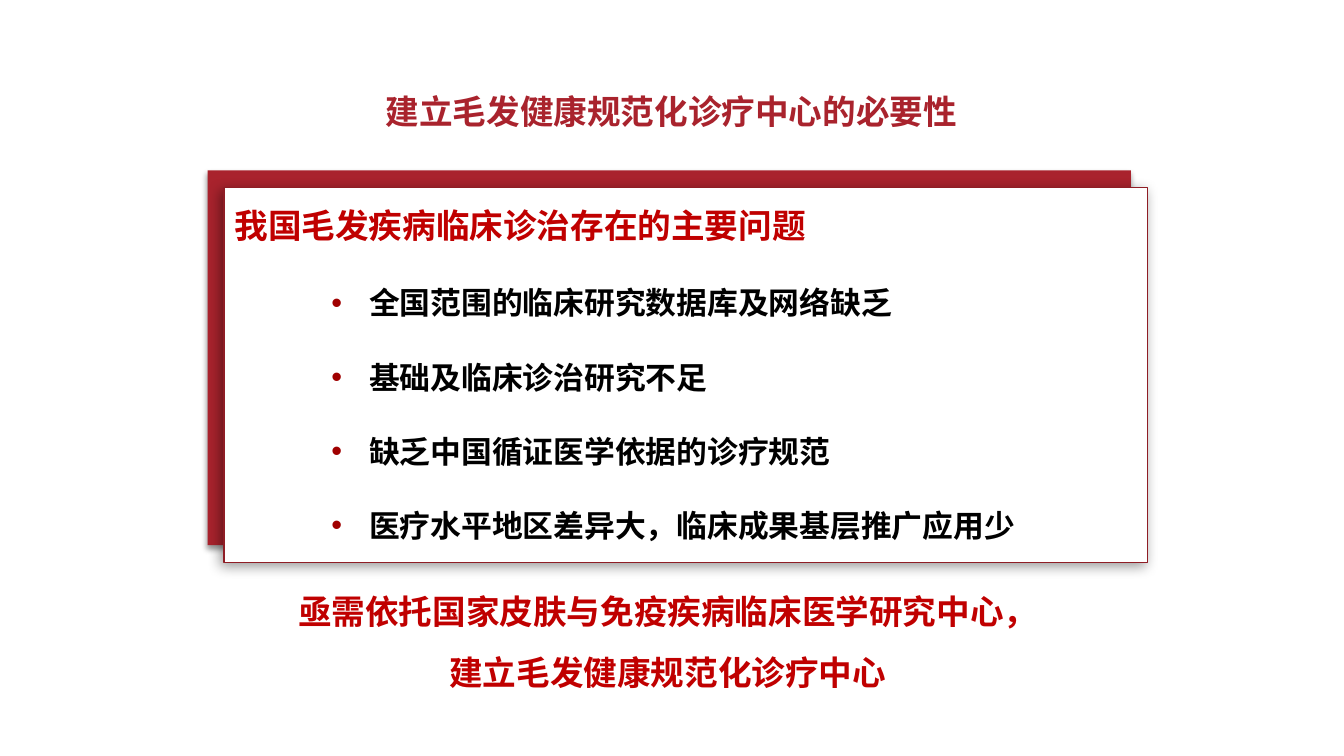
from dataclasses import dataclass

from lxml import etree
from pptx import Presentation
from pptx.dml.color import RGBColor
from pptx.enum import shapes, text
from pptx.oxml import ns
from pptx.util import Pt


@dataclass(frozen=True)
class Theme:
    font: str = "Noto Sans CJK SC"
    crimson: str = "A9232D"
    border: str = "8F1D25"
    red: str = "C00000"
    bullet: str = "A00000"
    black: str = "000000"
    white: str = "FFFFFF"
    heading_size: int = 24
    body_size: int = 22


THEME = Theme()
PROBLEMS = [
    "全国范围的临床研究数据库及网络缺乏",
    "基础及临床诊治研究不足",
    "缺乏中国循证医学依据的诊疗规范",
    "医疗水平地区差异大，临床成果基层推广应用少",
]
CONCLUSION = [
    "亟需依托国家皮肤与免疫疾病临床医学研究中心，",
    "建立毛发健康规范化诊疗中心",
]


def add_xml(parent, tag, **attrs):
    return etree.SubElement(parent, ns.qn(tag), attrs)


def add_shadow(sp, blur, distance, angle):
    sp.shadow.inherit = False
    effects = sp._element.spPr.find(ns.qn("a:effectLst"))
    outer = add_xml(effects, "a:outerShdw", blurRad=str(Pt(blur)), dist=str(Pt(distance)),
                    dir=str(angle * 60000), algn="ctr", rotWithShape="0")
    color = add_xml(outer, "a:srgbClr", val=THEME.black)
    add_xml(color, "a:alpha", val="40000")


def add_panel(s, left, top, fill, blur, angle, line=None):
    sp = s.shapes.add_shape(shapes.MSO_SHAPE.RECTANGLE,
                            Pt(left), Pt(top), Pt(659.5), Pt(267.8))
    sp.fill.solid()
    sp.fill.fore_color.rgb = RGBColor.from_string(fill)
    if line:
        sp.line.color.rgb = RGBColor.from_string(line)
        sp.line.width = Pt(1)
    else:
        sp.line.fill.background()
    add_shadow(sp, blur, 3, angle)


def add_bullet(p):
    pPr = p._p.get_or_add_pPr()
    pPr.set("marL", str(Pt(27)))
    pPr.set("indent", str(-Pt(27)))
    color = add_xml(pPr, "a:buClr")
    add_xml(color, "a:srgbClr", val=THEME.bullet)
    add_xml(pPr, "a:buFont", typeface="Arial")
    add_xml(pPr, "a:buChar", char="•")


def add_text(s, box, lines, color, size, spacing, bullets=False, inset=None):
    tf = s.shapes.add_textbox(*map(Pt, box)).text_frame
    tf.word_wrap = True
    if inset is not None:
        tf.margin_left = tf.margin_right = tf.margin_top = tf.margin_bottom = Pt(inset)
    for i, line in enumerate(lines):
        p = tf.add_paragraph() if i else tf.paragraphs[0]
        if bullets:
            add_bullet(p)
        else:
            p.alignment = text.PP_ALIGN.CENTER
        p.line_spacing = Pt(spacing)
        r = p.add_run()
        r.text = line
        r.font.name = THEME.font
        r.font.size = Pt(size)
        r.font.bold = True
        r.font.color.rgb = RGBColor.from_string(color)
        add_xml(r._r.get_or_add_rPr(), "a:ea", typeface=THEME.font)


def main():
    prs = Presentation()
    prs.slide_width, prs.slide_height = Pt(960), Pt(540)
    s = prs.slides.add_slide(prs.slide_layouts[6])

    # Offset panels behind the list
    add_panel(s, 148.3, 121.7, THEME.crimson, blur=4, angle=90)
    add_panel(s, 160, 133.9, THEME.white, blur=9, angle=135, line=THEME.border)

    # Problems and their heading
    add_text(s, (229.7, 172.8, 585.4, 212.4), PROBLEMS, THEME.black,
             THEME.body_size, spacing=53, bullets=True)
    add_text(s, (148.3, 141.8, 446.4, 36), ["我国毛发疾病临床诊治存在的主要问题"],
             THEME.red, THEME.heading_size, spacing=30)

    # Conclusion
    add_text(s, (145.4, 403.2, 663.1, 89.3), CONCLUSION, THEME.red,
             THEME.heading_size, spacing=44)

    # Slide title
    add_text(s, (266.4, 64.1, 426.2, 33.1), ["建立毛发健康规范化诊疗中心的必要性"],
             THEME.crimson, THEME.heading_size, spacing=27, inset=2.9)

    prs.save("out.pptx")


if __name__ == "__main__":
    main()
